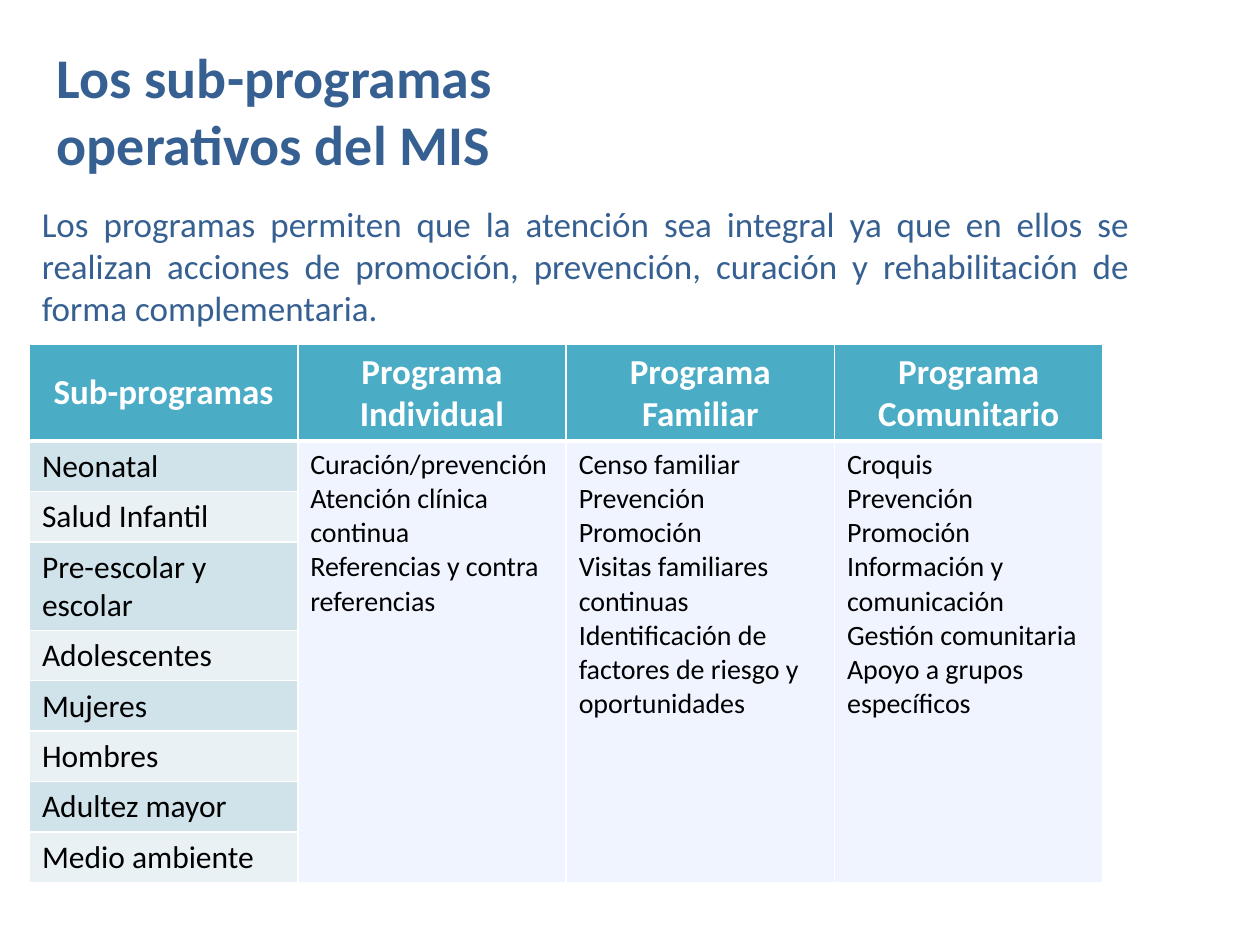
from dataclasses import dataclass

from lxml import etree
from pptx import Presentation
from pptx.dml.color import RGBColor
from pptx.enum.text import MSO_ANCHOR, MSO_AUTO_SIZE, PP_ALIGN
from pptx.oxml.ns import qn
from pptx.util import Pt

LEFT, CENTER, JUSTIFY = PP_ALIGN.LEFT, PP_ALIGN.CENTER, PP_ALIGN.JUSTIFY
TOP, MIDDLE = MSO_ANCHOR.TOP, MSO_ANCHOR.MIDDLE
FIT_SHAPE, NO_FIT = MSO_AUTO_SIZE.SHAPE_TO_FIT_TEXT, MSO_AUTO_SIZE.NONE
FONT = "Calibri"
BLUE, TEAL, WHITE, BLACK = "376092", "4BACC6", "FFFFFF", "000000"
BANDS = ("D0E3EA", "E9F1F5")
PALE = "EFF4FF"
HEADER_H, ROW_H, TALL_ROW_H = 54.8, 28.8, 50.4
COL_W = 153.36


@dataclass
class Program:
    name: str
    activities: list[str]
    anchor: MSO_ANCHOR


SUBPROGRAMS = [
    "Neonatal", "Salud Infantil", "Pre-escolar y escolar", "Adolescentes",
    "Mujeres", "Hombres", "Adultez mayor", "Medio ambiente",
]
TALL_SUBPROGRAM = "Pre-escolar y escolar"
PROGRAMS = [
    Program("Programa Individual", [
        "Curación/prevención", "Atención clínica continua",
        "Referencias y contra referencias",
    ], TOP),
    Program("Programa Familiar", [
        "Censo familiar", "Prevención", "Promoción",
        "Visitas familiares continuas",
        "Identificación de factores de riesgo y oportunidades",
    ], MIDDLE),
    Program("Programa Comunitario", [
        "Croquis", "Prevención", "Promoción", "Información y comunicación",
        "Gestión comunitaria", "Apoyo a grupos específicos",
    ], TOP),
]


def rgb(color: str) -> RGBColor:
    return RGBColor.from_string(color)


def write(tf, text: str, *, size: float, color: str, bold: bool = False,
          align: PP_ALIGN = LEFT) -> None:
    for i, line in enumerate(text.split("\n")):
        p = tf.paragraphs[0] if i == 0 else tf.add_paragraph()
        p.alignment = align
        r = p.add_run()
        r.text = line
        r.font.name = FONT
        r.font.size = Pt(size)
        r.font.bold = bold
        r.font.color.rgb = rgb(color)


def style_cell(cell, fill: str, top: float = 1, bottom: float = 1) -> None:
    tc_pr = cell._tc.get_or_add_tcPr()
    widths = {"a:lnL": 1, "a:lnR": 1, "a:lnT": top, "a:lnB": bottom}
    for i, (tag, width) in enumerate(widths.items()):
        ln = etree.Element(qn(tag), w=str(Pt(width)))
        solid = etree.SubElement(ln, qn("a:solidFill"))
        etree.SubElement(solid, qn("a:srgbClr"), val=WHITE)
        tc_pr.insert(i, ln)
    cell.fill.solid()
    cell.fill.fore_color.rgb = rgb(fill)


def add_title(s) -> None:
    sp = s.shapes.title
    sp.left, sp.top, sp.width, sp.height = Pt(25.2), Pt(15.12), Pt(375.12), Pt(95.04)
    tf = sp.text_frame
    tf.word_wrap = True
    tf.auto_size = NO_FIT
    tf.vertical_anchor = MIDDLE
    write(tf, "Los sub-programas operativos del MIS", size=32, color=BLUE, bold=True)


def add_intro(s) -> None:
    tf = s.shapes.add_textbox(Pt(16.8), Pt(112.32), Pt(635.76), Pt(79.92)).text_frame
    tf.word_wrap = True
    tf.auto_size = FIT_SHAPE
    write(tf, "Los programas permiten que la atención sea integral ya que en ellos "
          "se realizan acciones de promoción, prevención, curación y rehabilitación "
          "de forma complementaria.", size=20, color=BLUE, align=JUSTIFY)


def add_program_table(s) -> None:
    heights = [HEADER_H] + [TALL_ROW_H if name == TALL_SUBPROGRAM else ROW_H
                            for name in SUBPROGRAMS]
    cols = len(PROGRAMS) + 1
    table = s.shapes.add_table(len(heights), cols, Pt(16.8), Pt(196.8),
                               Pt(COL_W * cols), Pt(sum(heights))).table
    for row, height in zip(table.rows, heights):
        row.height = Pt(height)
    for col in table.columns:
        col.width = Pt(COL_W)

    headers = [("Sub-programas", MIDDLE)] + [(p.name, p.anchor) for p in PROGRAMS]
    for j, (name, anchor) in enumerate(headers):
        cell = table.cell(0, j)
        style_cell(cell, TEAL, bottom=3)
        cell.vertical_anchor = anchor
        write(cell.text_frame, name, size=20, color=WHITE, bold=True, align=CENTER)

    for i, name in enumerate(SUBPROGRAMS, 1):
        top = 3 if i == 1 else 1
        for j in range(cols):
            style_cell(table.cell(i, j), PALE if j else BANDS[(i - 1) % 2], top=top)
        cell = table.cell(i, 0)
        cell.vertical_anchor = MIDDLE
        write(cell.text_frame, name, size=18, color=BLACK)

    for j, program in enumerate(PROGRAMS, 1):
        cell = table.cell(1, j)
        cell.merge(table.cell(len(SUBPROGRAMS), j))
        write(cell.text_frame, "\n".join(program.activities), size=16, color=BLACK)


def main() -> None:
    prs = Presentation()
    prs.slide_width, prs.slide_height = Pt(720), Pt(540)
    s = prs.slides.add_slide(prs.slide_layouts[5])
    add_title(s)
    add_intro(s)
    add_program_table(s)
    prs.save("out.pptx")


if __name__ == "__main__":
    main()
